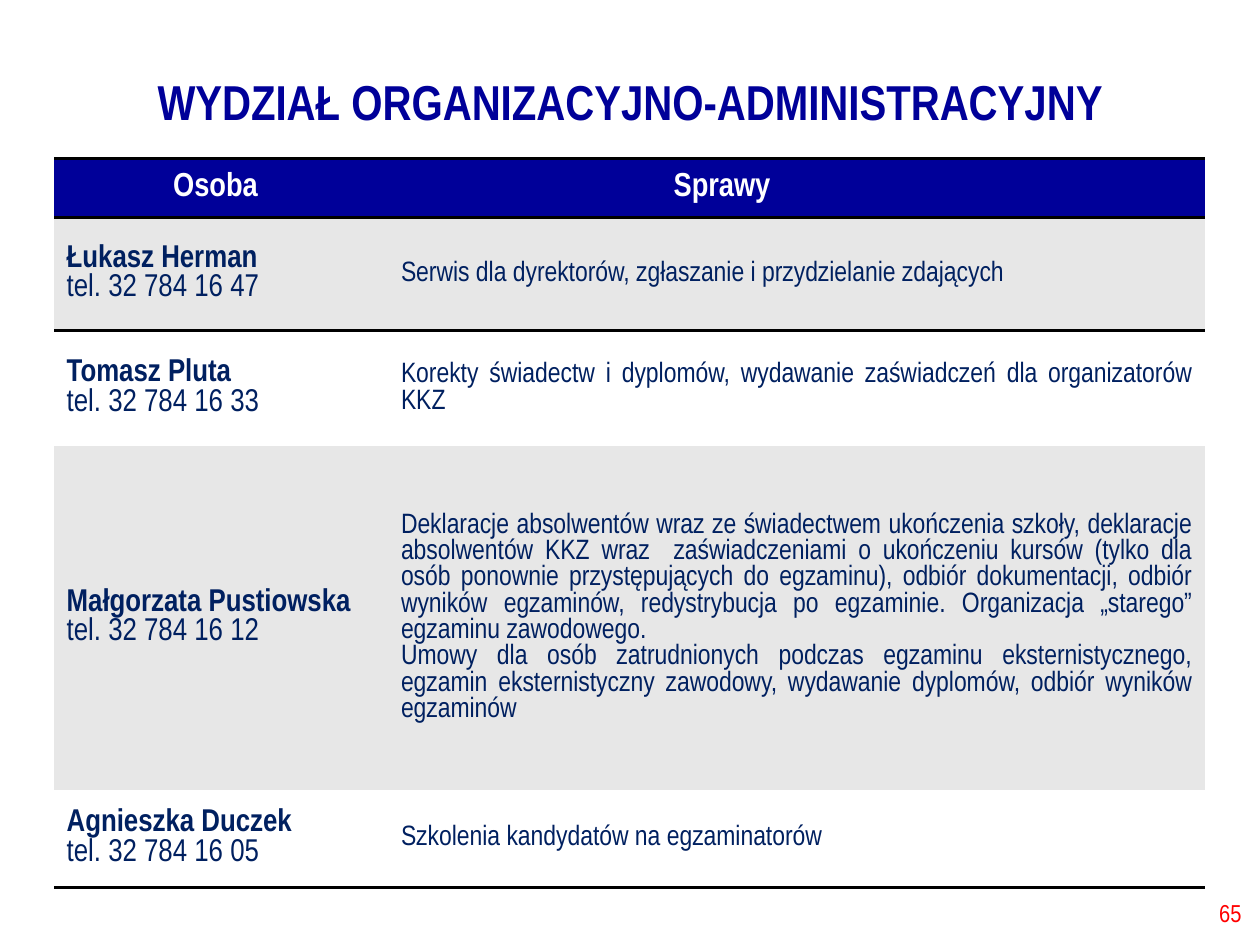
import pptx
import pptx.dml.color
import pptx.enum.text
import pptx.oxml.ns
import pptx.util
from lxml import etree

Cm = pptx.util.Cm
Pt = pptx.util.Pt
Align = pptx.enum.text.PP_ALIGN
Anchor = pptx.enum.text.MSO_ANCHOR
qn = pptx.oxml.ns.qn

NAVY = "000099"
INK = "002060"
GREY = "E7E7E7"
WHITE = "FFFFFF"
BLACK = "000000"
RED = "FF0000"
PLAIN = "{2D5ABB26-0587-4C30-8999-92F81FD0307C}"


def color(code):
    return pptx.dml.color.RGBColor.from_string(code)


class Deck:
    font = "Arial Narrow"

    def __init__(self):
        self.prs = pptx.Presentation()
        self.prs.slide_width = Cm(25.4)
        self.prs.slide_height = Cm(19.05)
        self.slide = self.prs.slides.add_slide(self.prs.slide_layouts[5])

    def place(self, shape, left, top, width, height):
        shape.left, shape.top = Cm(left), Cm(top)
        shape.width, shape.height = Cm(width), Cm(height)

    def letter(self, frame, lines, size, ink, align):
        for i, (text, bold) in enumerate(lines):
            para = frame.paragraphs[0] if i == 0 else frame.add_paragraph()
            para.alignment = align
            run = para.add_run()
            run.text = text
            run.font.name = self.font
            run.font.size = Pt(size)
            run.font.bold = bold
            run.font.color.rgb = color(ink)

    def title(self, text, *box):
        shape = self.slide.shapes.title
        self.place(shape, *box)
        frame = shape.text_frame
        frame.word_wrap = True
        frame.vertical_anchor = Anchor.MIDDLE
        self.letter(frame, [(text, True)], 28, NAVY, Align.CENTER)
        frame.paragraphs[0].line_spacing = 0.9

    def number(self, text, *box):
        shape = self.slide.shapes.add_textbox(*map(Cm, box))
        frame = shape.text_frame
        frame.word_wrap = True
        frame.vertical_anchor = Anchor.MIDDLE
        self.letter(frame, [(text, False)], 14, RED, Align.RIGHT)

    def table(self, left, top, cols, rows):
        shape = self.slide.shapes.add_table(
            len(rows), len(cols), Cm(left), Cm(top), Cm(sum(cols)), Cm(sum(rows)))
        shape._element.find(".//" + qn("a:tableStyleId")).text = PLAIN
        table = shape.table
        for col, width in zip(table.columns, cols):
            col.width = Cm(width)
        for row, height in zip(table.rows, rows):
            row.height = Cm(height)
        return table

    def border(self, cell, side, width):
        props = cell._tc.get_or_add_tcPr()
        line = etree.SubElement(props, qn("a:ln" + side), w=str(Pt(width)))
        fill = etree.SubElement(line, qn("a:solidFill"))
        etree.SubElement(fill, qn("a:srgbClr"), val=BLACK)

    def cell(self, cell, lines, size, ink, fill, align=Align.LEFT, edges=()):
        cell.vertical_anchor = Anchor.MIDDLE
        for side, width in edges:
            self.border(cell, side, width)
        cell.fill.solid()
        cell.fill.fore_color.rgb = color(fill)
        self.letter(cell.text_frame, lines, size, ink, align)


HEADS = [("Osoba", 2.4), ("Sprawy", 5.75)]
STAFF = [
    ("Łukasz Herman", "47", Align.LEFT,
     ["Serwis dla dyrektorów, zgłaszanie i przydzielanie zdających"]),
    ("Tomasz Pluta", "33", Align.JUSTIFY,
     ["Korekty świadectw i dyplomów, wydawanie zaświadczeń dla organizatorów KKZ"]),
    ("Małgorzata Pustiowska", "12", Align.JUSTIFY,
     ["Deklaracje absolwentów wraz ze świadectwem ukończenia szkoły, deklaracje "
      "absolwentów KKZ wraz  zaświadczeniami o ukończeniu kursów (tylko dla osób "
      "ponownie przystępujących do egzaminu), odbiór dokumentacji, odbiór wyników "
      "egzaminów, redystrybucja po egzaminie. Organizacja „starego” egzaminu "
      "zawodowego.",
      "Umowy dla osób zatrudnionych podczas egzaminu eksternistycznego, egzamin "
      "eksternistyczny zawodowy, wydawanie dyplomów, odbiór wyników egzaminów"]),
    ("Agnieszka Duczek", "05", Align.LEFT,
     ["Szkolenia kandydatów na egzaminatorów"]),
]


def main():
    deck = Deck()
    deck.title("WYDZIAŁ ORGANIZACYJNO-ADMINISTRACYJNY", 0, 1.47, 25.4, 1.27)
    table = deck.table(1.09, 3.2, [6.74, 16.47], [1.18, 2.29, 2.33, 6.92, 1.97])

    for col, (text, inset) in enumerate(HEADS):
        head = table.cell(0, col)
        head.margin_left = Cm(inset)
        deck.cell(head, [(text, True)], 19, WHITE, NAVY,
                  edges=[("T", 2), ("B", 2)])

    for row, (name, phone, align, tasks) in enumerate(STAFF, 1):
        fill = GREY if row % 2 else WHITE
        edges = [("T", 2)] if row == 1 else []
        if row == len(STAFF):
            edges = [("B", 2.25)]
        lines = [(name, True), ("tel. 32 784 16 " + phone, False)]
        deck.cell(table.cell(row, 0), lines, 18, INK, fill, edges=edges)
        lines = [(task, False) for task in tasks]
        deck.cell(table.cell(row, 1), lines, 16, INK, fill, align, edges)

    deck.number("65", 19.56, 17.88, 5.72, 1.02)
    deck.prs.save("out.pptx")


if __name__ == "__main__":
    main()
